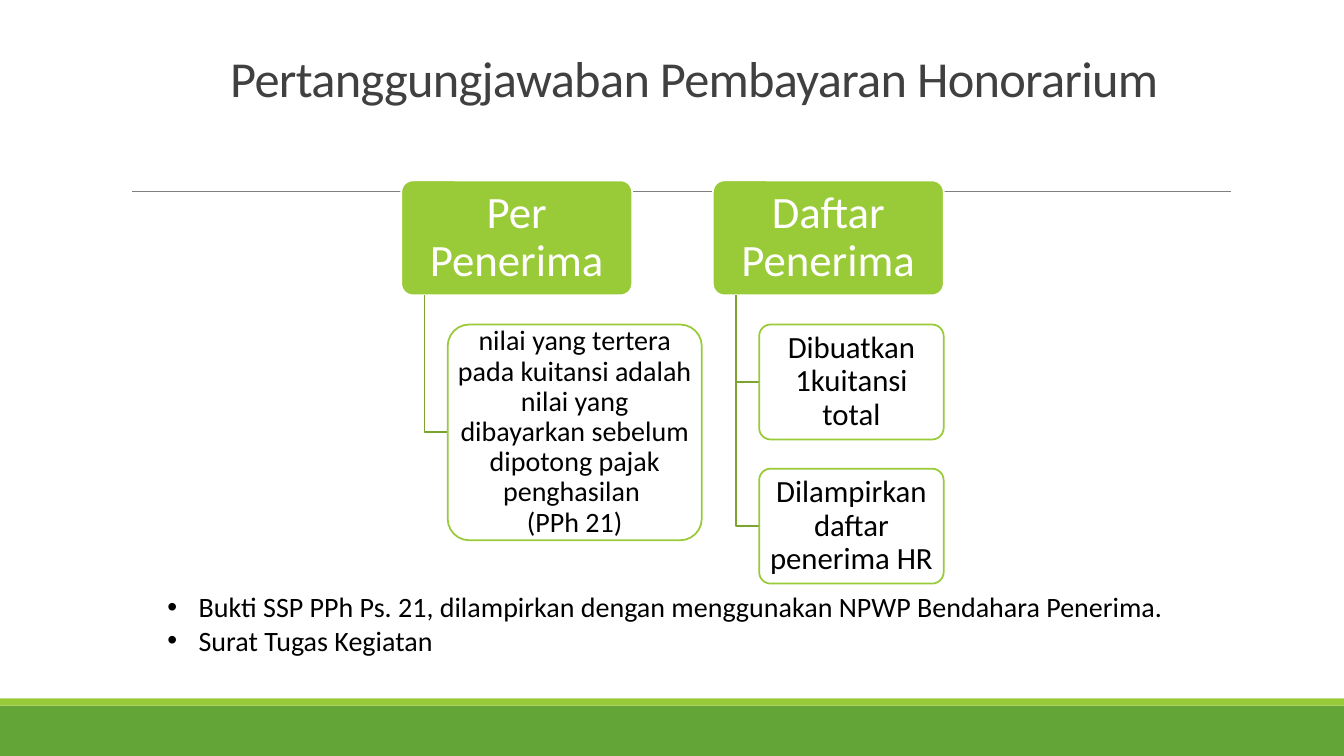
from dataclasses import dataclass

from pptx import Presentation
from pptx import util as u
from pptx.dml.color import RGBColor
from pptx.enum import shapes, text
from pptx.oxml import parse_xml
from pptx.oxml.ns import nsdecls


@dataclass(frozen=True)
class Theme:
    font: str = "Calibri"
    dark_green: str = "63A537"
    green: str = "99CB38"
    branch_green: str = "7BA32D"
    white: str = "FFFFFF"
    black: str = "000000"
    title_grey: str = "404040"
    rule_grey: str = "808080"
    title_size: int = 36
    head_size: int = 32
    leaf_size: int = 22
    small_size: int = 20
    outline: float = 1.25


@dataclass(frozen=True)
class Leaf:
    wording: str
    width: float
    height: float
    size: int


@dataclass(frozen=True)
class Branch:
    heading: str
    left: float
    leaves: tuple[Leaf, ...]


THEME = Theme()
HEAD_TOP, HEAD_WIDTH, HEAD_HEIGHT = 1.79, 2.29, 1.14
INDENT, GAP = 0.23, 0.29

BRANCHES = (
    Branch("Per Penerima", 3.98, (
        Leaf("nilai yang tertera pada kuitansi adalah nilai yang\n"
             "dibayarkan sebelum dipotong pajak penghasilan \n(PPh 21)",
             2.52, 2.14, THEME.small_size),
    )),
    Branch("Daftar Penerima", 7.07, (
        Leaf("Dibuatkan 1kuitansi total", 1.83, 1.14, THEME.leaf_size),
        Leaf("Dilampirkan daftar penerima HR", 1.83, 1.14, THEME.leaf_size),
    )),
)
EVIDENCE = (
    "Bukti SSP PPh Ps. 21, dilampirkan dengan menggunakan NPWP Bendahara Penerima.",
    "Surat Tugas Kegiatan",
)


def rgb(colour: str) -> RGBColor:
    return RGBColor.from_string(colour)


def write(paragraph, wording: str, *, size: int, colour: str,
          align=text.PP_ALIGN.CENTER, spacing: float = 0.9,
          tracking: int = 0, bullet: bool = False) -> None:
    paragraph.text = wording
    paragraph.alignment = align
    paragraph.line_spacing = spacing
    paragraph.space_before = paragraph.space_after = u.Pt(0)
    for run in paragraph.runs:
        run.font.name = THEME.font
        run.font.size = u.Pt(size)
        run.font.color.rgb = rgb(colour)
        if tracking:
            run.font._element.set("spc", str(tracking))
    if bullet:
        properties = paragraph._p.get_or_add_pPr()
        properties.set("marL", str(u.Inches(0.31)))
        properties.set("indent", str(u.Inches(-0.31)))
        for tag in ('a:buFont %s typeface="Arial"', 'a:buChar %s char="•"'):
            properties.append(parse_xml("<" + tag % nsdecls("a") + "/>"))


def place(shape, left: float, top: float, width: float, height: float) -> None:
    shape.left, shape.top = u.Inches(left), u.Inches(top)
    shape.width, shape.height = u.Inches(width), u.Inches(height)


def add_band(slide, top: float, height: float, colour: str) -> None:
    band = slide.shapes.add_shape(
        shapes.MSO_SHAPE.RECTANGLE, 0, u.Inches(top), u.Inches(13.33), u.Inches(height))
    band.shadow.inherit = False
    band.fill.solid()
    band.fill.fore_color.rgb = rgb(colour)
    band.line.fill.background()


def add_card(slide, left: float, top: float, width: float, height: float,
             wording: str, *, size: int, fill: str, outline: str, colour: str) -> None:
    card = slide.shapes.add_shape(
        shapes.MSO_SHAPE.ROUNDED_RECTANGLE, u.Inches(left), u.Inches(top),
        u.Inches(width), u.Inches(height))
    card.adjustments[0] = 0.1
    card.shadow.inherit = False
    card.fill.solid()
    card.fill.fore_color.rgb = rgb(fill)
    card.line.color.rgb = rgb(outline)
    card.line.width = u.Pt(THEME.outline)
    frame = card.text_frame
    frame.word_wrap = True
    frame.vertical_anchor = text.MSO_ANCHOR.MIDDLE
    frame.margin_left = frame.margin_right = u.Inches(0.02)
    frame.margin_top = frame.margin_bottom = 0
    write(frame.paragraphs[0], wording, size=size, colour=colour)


def add_elbow(slide, left: float, top: float, bottom: float) -> None:
    builder = slide.shapes.build_freeform(u.Inches(left), u.Inches(top))
    builder.add_line_segments(
        [(u.Inches(left), u.Inches(bottom)),
         (u.Inches(left + INDENT), u.Inches(bottom))], close=False)
    elbow = builder.convert_to_shape()
    elbow.shadow.inherit = False
    elbow.fill.background()
    elbow.line.color.rgb = rgb(THEME.branch_green)
    elbow.line.width = u.Pt(THEME.outline)


def add_branch(slide, branch: Branch) -> None:
    add_card(slide, branch.left, HEAD_TOP, HEAD_WIDTH, HEAD_HEIGHT, branch.heading,
             size=THEME.head_size, fill=THEME.green, outline=THEME.white,
             colour=THEME.white)
    head_bottom = HEAD_TOP + HEAD_HEIGHT
    top = head_bottom + GAP
    for leaf in branch.leaves:
        add_elbow(slide, branch.left + INDENT, head_bottom, top + leaf.height / 2)
        add_card(slide, branch.left + 2 * INDENT, top, leaf.width, leaf.height,
                 leaf.wording, size=leaf.size, fill=THEME.white,
                 outline=THEME.green, colour=THEME.black)
        top += leaf.height + GAP


def main() -> None:
    deck = Presentation()
    deck.slide_width, deck.slide_height = u.Inches(13.33), u.Inches(7.5)
    slide = deck.slides.add_slide(deck.slide_layouts[1])

    # Footer bands and rule under the title
    add_band(slide, 7, 0.5, THEME.dark_green)
    add_band(slide, 6.93, 0.07, THEME.green)
    rule = slide.shapes.add_connector(
        shapes.MSO_CONNECTOR.STRAIGHT, u.Inches(1.31), u.Inches(1.9),
        u.Inches(12.21), u.Inches(1.9))
    rule.line.color.rgb = rgb(THEME.rule_grey)
    rule.line.width = u.Pt(0.5)
    rule._element.spPr.append(parse_xml(f"<a:effectLst {nsdecls('a')}/>"))

    # Title
    heading = slide.shapes.title
    place(heading, 2.11, 0.17, 9.55, 0.95)
    heading.text_frame.auto_size = text.MSO_AUTO_SIZE.NONE
    heading.text_frame.vertical_anchor = text.MSO_ANCHOR.BOTTOM
    write(heading.text_frame.paragraphs[0], "Pertanggungjawaban Pembayaran Honorarium",
          size=THEME.title_size, colour=THEME.title_grey, spacing=0.85, tracking=-50)

    # Two branches of payment accountability
    for branch in BRANCHES:
        add_branch(slide, branch)

    # Supporting evidence
    evidence = slide.placeholders[1]
    place(evidence, 1.56, 5.8, 11.11, 0.77)
    frame = evidence.text_frame
    frame.auto_size = text.MSO_AUTO_SIZE.NONE
    for number, item in enumerate(EVIDENCE):
        paragraph = frame.add_paragraph() if number else frame.paragraphs[0]
        write(paragraph, item, size=THEME.small_size, colour=THEME.black,
              align=text.PP_ALIGN.LEFT, spacing=1.0, bullet=True)

    deck.save("out.pptx")


if __name__ == "__main__":
    main()
